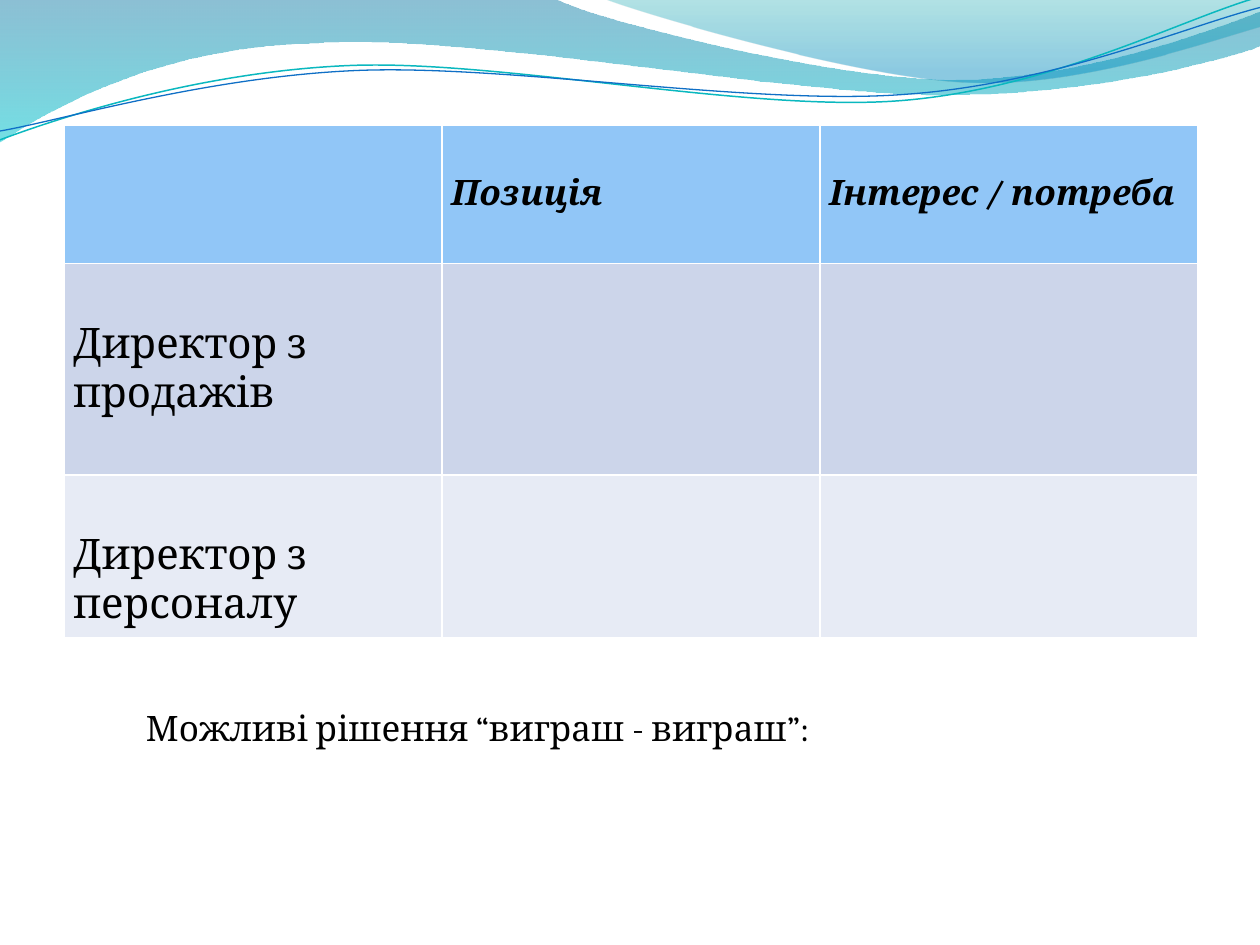
from math import cos, radians, sin

from lxml.etree import SubElement
from pptx import Presentation
from pptx.dml.color import RGBColor
from pptx.enum.text import MSO_ANCHOR as Anchor
from pptx.oxml.ns import qn
from pptx.util import Inches, Pt

FONT = "Cambria"
BLACK = RGBColor(0x00, 0x00, 0x00)
HEADER_BLUE = RGBColor(0x91, 0xC6, 0xF7)
BAND_DARK = RGBColor(0xCC, 0xD5, 0xEA)
BAND_LIGHT = RGBColor(0xE7, 0xEB, 0xF5)
DEEP_BLUE = RGBColor(0x00, 0x74, 0xA1)
AQUA = RGBColor(0x00, 0xC6, 0xCF)
TEAL = RGBColor(0x00, 0xA1, 0xA9)
SKY = RGBColor(0x00, 0x8B, 0xBF)
LINE_TEAL = RGBColor(0x0A, 0xB8, 0xBF)
LINE_BLUE = RGBColor(0x0F, 0x6F, 0xC6)

# Content: each row has a height, fill, anchor, text format and cell texts
HEADER_FORMAT = {"size": 20, "bold": True, "italic": True}
BODY_FORMAT = {"size": 24}
ROWS = [
    (1.1, HEADER_BLUE, Anchor.MIDDLE, HEADER_FORMAT,
     ["", "Позиція", "Інтерес / потреба"]),
    (1.68, BAND_DARK, Anchor.MIDDLE, BODY_FORMAT,
     ["Директор з продажів", "", ""]),
    (1.29, BAND_LIGHT, Anchor.BOTTOM, BODY_FORMAT,
     ["Директор з\nперсоналу", "", ""]),
]
SOLUTIONS = "Можливі рішення “виграш - виграш”:"

# Waves: a start point, then steps of one point (line) or three (curve);
# gradient stops are position, colour and opacity in percent
BANDS = [
    ([[(0, 0)], [(4.4, -0.01)],
      [(4.76, 0.17), (6.64, 0.63), (7.58, 0.63)],
      [(8.53, 0.63), (9.58, 0.26), (10, 0.09)], [(10.01, 0.36)],
      [(9.83, 0.44), (8.7, 0.76), (7.46, 0.75)],
      [(6.22, 0.75), (3.82, 0.28), (2.57, 0.34)],
      [(1.29, 0.36), (0.46, 0.83), (-0.01, 1.13)], [(0, 0)]],
     [(0, DEEP_BLUE, 45), (1, AQUA, 55)]),
    ([[(4.79, -0.01)],
      [(5.09, 0.11), (6.82, 0.62), (7.69, 0.65)],
      [(8.56, 0.69), (9.61, 0.32), (10, 0.21)], [(10, 0)], [(4.79, -0.01)]],
     [(0, TEAL, 30), (0.8, SKY, 45)]),
]
# Strands: outline as seen, centre, colour, line width
TILT = -2.7
STRANDS = [
    ([[(0, 1.11)],
      [(0.48, 0.93), (1.58, 0.57), (2.77, 0.52)],
      [(3.95, 0.47), (5.93, 0.89), (7.13, 0.8)],
      [(8.33, 0.71), (9.38, 0.15), (9.98, -0.02)]],
     (4.99, 0.58), LINE_TEAL, 0.85),
    ([[(0, 1.04)],
      [(0.47, 0.96), (1.64, 0.61), (2.83, 0.56)],
      [(4.03, 0.51), (5.97, 0.84), (7.17, 0.75)],
      [(8.36, 0.67), (9.41, 0.21), (10, 0.06)]],
     (5, 0.59), LINE_BLUE, 0.75),
]


def turn(point, center, degrees):
    """Turn a point clockwise about a centre."""
    angle = radians(degrees)
    x, y = point[0] - center[0], point[1] - center[1]
    return (center[0] + x * cos(angle) - y * sin(angle),
            center[1] + x * sin(angle) + y * cos(angle))


def add_wave(page, outline, close):
    """Draw the outline, joining each step of three points into a curve."""
    points = [(Inches(x), Inches(y)) for step in outline for x, y in step]
    builder = page.shapes.build_freeform(*points[0])
    builder.add_line_segments(points[1:], close=close)
    wave = builder.convert_to_shape()
    wave.shadow.inherit = False
    segments = iter(list(wave.element.iter(qn("a:lnTo"))))
    for step in outline[1:]:
        parts = [next(segments) for _ in step]
        if len(parts) == 3:
            curve = SubElement(parts[0].getparent(), qn("a:cubicBezTo"))
            parts[0].addprevious(curve)
            for part in parts:
                curve.append(part[0])
                part.getparent().remove(part)
    return wave


def fill_gradient(shape, stops):
    shape.fill.gradient()
    shape.fill.gradient_angle = 270
    for stop, (position, color, opacity) in zip(shape.fill.gradient_stops, stops):
        stop.position = position
        stop.color.rgb = color
    colors = shape.element.spPr.iter(qn("a:srgbClr"))
    for node, (position, color, opacity) in zip(colors, stops):
        SubElement(node, qn("a:alpha"), val=str(opacity * 1000))


def write(frame, text, size=20, bold=False, italic=False, color=BLACK):
    frame.word_wrap = True
    for index, line in enumerate(text.split("\n")):
        para = frame.add_paragraph() if index else frame.paragraphs[0]
        span = para.add_run()
        span.text = line
        font = span.font
        font.name, font.size, font.color.rgb = FONT, Pt(size), color
        font.bold, font.italic = bold, italic


deck = Presentation()
deck.slide_width, deck.slide_height = Inches(10), Inches(7.5)
page = deck.slides.add_slide(deck.slide_layouts[6])

# Waves along the top
for outline, stops in BANDS:
    band = add_wave(page, outline, True)
    fill_gradient(band, stops)
    band.line.fill.background()
for outline, center, color, width in STRANDS:
    level = [[turn(point, center, -TILT) for point in step] for step in outline]
    strand = add_wave(page, level, False)
    strand.rotation = TILT
    strand.fill.background()
    strand.line.color.rgb = color
    strand.line.width = Pt(width)

# Table of positions and interests; white borders come from the table style
table = page.shapes.add_table(
    len(ROWS), 3, Inches(0.51), Inches(0.99), Inches(9),
    Inches(sum(row[0] for row in ROWS))).table
for r, (height, fill, anchor, style, texts) in enumerate(ROWS):
    table.rows[r].height = Inches(height)
    for c, text in enumerate(texts):
        cell = table.cell(r, c)
        cell.fill.solid()
        cell.fill.fore_color.rgb = fill
        cell.vertical_anchor = anchor
        cell.margin_left = cell.margin_right = Inches(0.07)
        cell.margin_top = cell.margin_bottom = Inches(0.07)
        if text:
            write(cell.text_frame, text, **style)

# Solutions line
box = page.shapes.add_textbox(Inches(1.06), Inches(5.56), Inches(5.83), Inches(0.44))
write(box.text_frame, SOLUTIONS)

deck.save("out.pptx")
